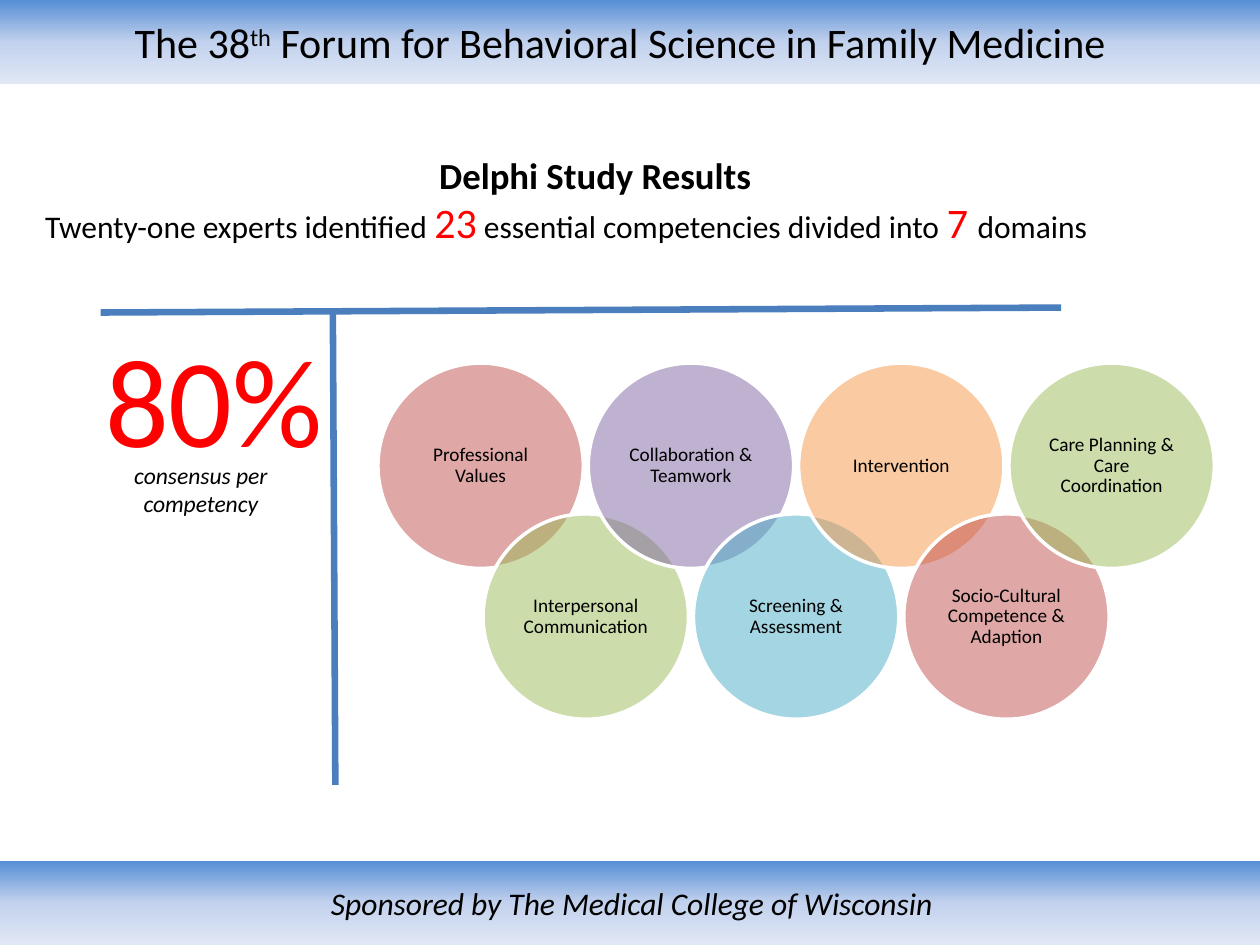
from copy import deepcopy

from lxml.etree import SubElement
from pptx import Presentation
from pptx.dml.color import RGBColor as RGB
from pptx.enum.shapes import MSO_CONNECTOR as LINK, MSO_SHAPE as SHAPE
from pptx.enum.text import MSO_ANCHOR as ANCHOR, PP_ALIGN as ALIGN
from pptx.oxml.ns import qn
from pptx.util import Cm, Pt

BLACK = RGB(0x00, 0x00, 0x00)
WHITE = RGB(0xFF, 0xFF, 0xFF)
RED = RGB(0xFF, 0x00, 0x00)
RULE = RGB(0x4B, 0x7E, 0xBC)
ROSE = RGB(0xC0, 0x50, 0x4D)
GREEN = RGB(0x9B, 0xBB, 0x59)
PURPLE = RGB(0x80, 0x64, 0xA2)
TEAL = RGB(0x4B, 0xAC, 0xC6)
ORANGE = RGB(0xF7, 0x96, 0x46)
FADE = [(0, RGB(0x55, 0x8E, 0xD5)), (0.5, RGB(0xC2, 0xD1, 0xED)),
        (1, RGB(0xE1, 0xE8, 0xF5))]


def style(para, size, color=BLACK, align=ALIGN.CENTER):
    para.alignment = align
    font = para.font
    font.name, font.size, font.color.rgb = "Calibri", Pt(size), color
    return font


def add_box(left, top, width, height):
    """Add a wrapping text box and return its text frame."""
    box = slide.shapes.add_textbox(Cm(left), Cm(top), Cm(width), Cm(height))
    box.text_frame.word_wrap = True
    return box.text_frame


deck = Presentation()
deck.slide_width, deck.slide_height = Cm(25.4), Cm(19.05)
slide = deck.slides.add_slide(deck.slide_layouts[6])

# Header and footer bars
bars = []
for top, width in [(0, 25.4), (17.35, 25.48)]:
    bar = slide.shapes.add_shape(SHAPE.RECTANGLE, 0, Cm(top), Cm(width), Cm(1.7))
    bar.shadow.inherit = False
    bar.line.fill.background()
    bar.fill.gradient()
    bar.fill.gradient_angle = 270
    stops = bar._element.spPr.find(".//" + qn("a:gsLst"))
    stops.append(deepcopy(stops[0]))
    for stop, (place, color) in zip(bar.fill.gradient_stops, FADE):
        stop.position, stop.color.rgb = place, color
    bar.text_frame.vertical_anchor = ANCHOR.MIDDLE
    bars.append(bar.text_frame)

head, foot = bars
head.margin_right = Cm(0.64)
para = head.paragraphs[0]
for text in ["The 38", "th", " Forum for Behavioral Science in Family Medicine"]:
    run = para.add_run()
    run.text = text
    if text == "th":
        run._r.get_or_add_rPr().set("baseline", "30000")
style(para, 24)

foot.text = "Sponsored by The Medical College of Wisconsin"
style(foot.paragraphs[0], 18).italic = True

# Title and finding
frame = add_box(0.66, 2.95, 22.68, 2.18)
frame.text = "Delphi Study Results"
style(frame.paragraphs[0], 21).bold = True
para = frame.add_paragraph()
style(para, 18, align=ALIGN.LEFT)
for text in ["Twenty-one experts identified ", "23",
             " essential competencies divided into ", "7 ", "domains"]:
    run = para.add_run()
    run.text = text
    if text.strip().isdigit():
        run.font.size, run.font.color.rgb = Pt(24), RED

# Consensus figure
frame = add_box(0.71, 6.38, 7.21, 3.28)
frame.margin_left = frame.margin_right = Cm(0.18)
frame.margin_top = frame.margin_bottom = Cm(0.1)
frame.text = "80%"
style(frame.paragraphs[0], 72, RED)

frame = add_box(2.03, 9.17, 4.04, 1.42)
frame.text = "consensus per competency"
style(frame.paragraphs[0], 13.5).italic = True

# Seven domains, alternating between two rows
domains = [
    ("Professional Values", ROSE),
    ("Interpersonal Communication", GREEN),
    ("Collaboration & Teamwork", PURPLE),
    ("Screening & Assessment", TEAL),
    ("Intervention", ORANGE),
    ("Socio-Cultural Competence & Adaption", ROSE),
    ("Care Planning & Care Coordination", GREEN),
]
for i, (text, color) in enumerate(domains):
    disc = slide.shapes.add_shape(
        SHAPE.OVAL, Cm(7.62 + 2.12 * i), Cm(7.32 + 3.04 * (i % 2)), Cm(4.14), Cm(4.14))
    disc.shadow.inherit = False
    disc.fill.solid()
    disc.fill.fore_color.rgb = color
    tint = disc._element.spPr.find(qn("a:solidFill"))[0]
    SubElement(tint, qn("a:alpha")).set("val", "50000")
    disc.line.color.rgb, disc.line.width = WHITE, Pt(2)
    frame = disc.text_frame
    frame.word_wrap = True
    frame.vertical_anchor = ANCHOR.MIDDLE
    frame.margin_left = frame.margin_right = Cm(0.13)
    frame.margin_top = frame.margin_bottom = Cm(0.13)
    frame.text = text
    para = frame.paragraphs[0]
    para.line_spacing = 0.9
    style(para, 11)

# Dividing rules
for ends in [(6.71, 6.3, 6.76, 15.82), (21.39, 6.2, 2.03, 6.3)]:
    rule = slide.shapes.add_connector(LINK.STRAIGHT, *[Cm(n) for n in ends])
    rule.line.color.rgb, rule.line.width = RULE, Pt(3.75)
    SubElement(rule._element.spPr, qn("a:effectLst"))

deck.save("out.pptx")
